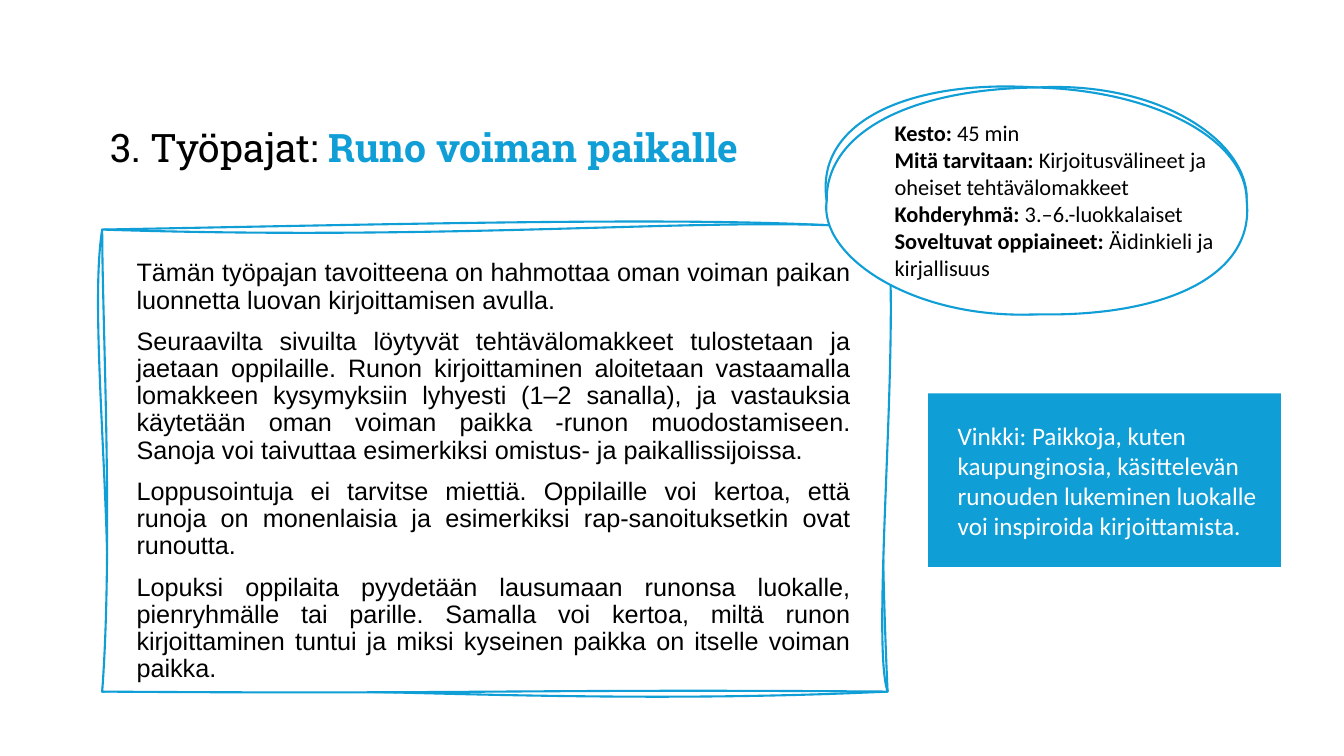
from lxml.etree import SubElement
from pptx import Presentation
from pptx.dml.color import RGBColor
from pptx.enum.shapes import MSO_SHAPE
from pptx.enum.text import MSO_ANCHOR, MSO_AUTO_SIZE, PP_ALIGN
from pptx.oxml.ns import qn
from pptx.util import Pt

BLUE = RGBColor(0x0F, 0x9E, 0xD5)
BLACK = RGBColor(0, 0, 0)
WHITE = RGBColor(0xFF, 0xFF, 0xFF)

WIDE_MARGINS = (7.2, 3.6)
NARROW_MARGINS = (4.5, 2.25)

# Each stroke is a start point followed by cubic curves, in points from the shape's corner.
FRAME_STROKES = [
    [(0, 0),
     (265, -5), (459, -10), (561, 0),
     (558, 69), (554, 176), (561, 330),
     (327, 341), (137, 323), (0, 330),
     (13, 251), (-11, 67), (0, 0)],
    [(0, 0),
     (274, 9), (462, -12), (561, 0),
     (570, 80), (549, 294), (561, 330),
     (300, 328), (276, 332), (0, 330),
     (8, 222), (0, 64), (0, 0)],
]
OVAL_STROKES = [
    [(0, 81),
     (-9, 24), (60, -6), (150, 0),
     (238, -5), (302, 39), (300, 81),
     (289, 130), (240, 148), (150, 162),
     (76, 163), (-1, 132), (0, 81)],
    [(0, 81),
     (-1, 33), (58, 1), (150, 0),
     (232, 2), (300, 36), (300, 81),
     (306, 135), (241, 164), (150, 162),
     (61, 166), (-6, 120), (0, 81)],
]

TITLE = [[("3. Työpajat: ", False), ("Runo voiman paikalle", True)]]
WORKSHOP_TEXT = [
    "Tämän työpajan tavoitteena on hahmottaa oman voiman paikan luonnetta "
    "luovan kirjoittamisen avulla.",
    "Seuraavilta sivuilta löytyvät tehtävälomakkeet tulostetaan ja jaetaan "
    "oppilaille. Runon kirjoittaminen aloitetaan vastaamalla lomakkeen "
    "kysymyksiin lyhyesti (1–2 sanalla), ja vastauksia käytetään oman voiman "
    "paikka -runon muodostamiseen. Sanoja voi taivuttaa esimerkiksi omistus- "
    "ja paikallissijoissa.",
    "Loppusointuja ei tarvitse miettiä. Oppilaille voi kertoa, että runoja on "
    "monenlaisia ja esimerkiksi rap-sanoituksetkin ovat runoutta.",
    "Lopuksi oppilaita pyydetään lausumaan runonsa luokalle, pienryhmälle tai "
    "parille. Samalla voi kertoa, miltä runon kirjoittaminen tuntui ja miksi "
    "kyseinen paikka on itselle voiman paikka.",
]
FACTS = [
    [("Kesto: ", True), ("45 min", False)],
    [("Mitä tarvitaan:", True),
     (" Kirjoitusvälineet ja oheiset tehtävälomakkeet", False)],
    [("Kohderyhmä:", True), (" 3.–6.-luokkalaiset", False)],
    [("Soveltuvat oppiaineet: ", True), ("Äidinkieli ja kirjallisuus", False)],
]
TIP = ["Vinkki: Paikkoja, kuten kaupunginosia, käsittelevän runouden lukeminen "
       "luokalle voi inspiroida kirjoittamista."]


def add_sketched_outline(slide, left, top, width, height, strokes):
    """Draw a white shape whose blue outline is gone over once per stroke."""
    right, bottom = left + width, top + height
    builder = slide.shapes.build_freeform(Pt(left), Pt(top))
    builder.add_line_segments(
        [(Pt(x), Pt(y)) for x, y in ((right, top), (right, bottom), (left, bottom))])
    outline = builder.convert_to_shape()
    outline.shadow.inherit = False
    outline.fill.solid()
    outline.fill.fore_color.rgb = WHITE
    outline.line.color.rgb = BLUE
    outline.line.width = Pt(1.5)

    curves = next(outline.element.iter(qn("a:pathLst")))
    for corner_path in list(curves):
        curves.remove(corner_path)
    for index, stroke in enumerate(strokes):
        curve = SubElement(curves, qn("a:path"), w=str(width), h=str(height))
        if index < len(strokes) - 1:
            curve.set("fill", "none")
        add_points(curve, "a:moveTo", stroke[:1])
        for first in range(1, len(stroke), 3):
            add_points(curve, "a:cubicBezTo", stroke[first:first + 3])
        SubElement(curve, qn("a:close"))


def add_points(curve, command, points):
    step = SubElement(curve, qn(command))
    for x, y in points:
        SubElement(step, qn("a:pt"), x=str(x), y=str(y))


def add_panel(slide, left, top, width, height):
    panel = slide.shapes.add_shape(
        MSO_SHAPE.RECTANGLE, Pt(left), Pt(top), Pt(width), Pt(height))
    panel.shadow.inherit = False
    panel.fill.solid()
    panel.fill.fore_color.rgb = BLUE
    panel.line.fill.background()


def add_text(slide, left, top, width, height, paragraphs, font, size,
             color=BLACK, bold_color=BLACK, margins=WIDE_MARGINS,
             anchor=MSO_ANCHOR.TOP, align=PP_ALIGN.LEFT,
             line_spacing=1.0, space_before=0, grow=False):
    """Add a text box; a paragraph is a string or a list of (words, bold) pairs."""
    frame = slide.shapes.add_textbox(
        Pt(left), Pt(top), Pt(width), Pt(height)).text_frame
    frame.word_wrap = True
    frame.auto_size = MSO_AUTO_SIZE.SHAPE_TO_FIT_TEXT if grow else MSO_AUTO_SIZE.NONE
    frame.vertical_anchor = anchor
    frame.margin_left = frame.margin_right = Pt(margins[0])
    frame.margin_top = frame.margin_bottom = Pt(margins[1])
    for index, content in enumerate(paragraphs):
        paragraph = frame.add_paragraph() if index else frame.paragraphs[0]
        paragraph.alignment = align
        paragraph.line_spacing = line_spacing
        paragraph.space_before = Pt(space_before if index else 0)
        paragraph.font.name = font
        paragraph.font.size = Pt(size)
        parts = [(content, False)] if isinstance(content, str) else content
        for words, bold in parts:
            run = paragraph.add_run()
            run.text = words
            run.font.bold = bold
            run.font.color.rgb = bold_color if bold else color


def main():
    presentation = Presentation()
    presentation.slide_width, presentation.slide_height = Pt(960), Pt(540)
    slide = presentation.slides.add_slide(presentation.slide_layouts[6])

    add_panel(slide, 663, 281, 252, 124)
    add_sketched_outline(slide, 73, 164, 561, 330, FRAME_STROKES)
    add_sketched_outline(slide, 590.5, 62.5, 300, 162, OVAL_STROKES)

    add_text(slide, 72, 49.5, 492.5, 114.5, TITLE, "Roboto Slab", 28,
             bold_color=BLUE, anchor=MSO_ANCHOR.MIDDLE, line_spacing=0.9)
    add_text(slide, 93, 183.5, 519, 258.5, WORKSHOP_TEXT, "Arial", 18,
             margins=NARROW_MARGINS, align=PP_ALIGN.JUSTIFY,
             line_spacing=0.9, space_before=10)
    add_text(slide, 634.5, 83, 242.5, 121, FACTS, "Calibri", 16,
             margins=NARROW_MARGINS, grow=True)
    add_text(slide, 677, 296.5, 237.5, 94.5, TIP, "Calibri", 18,
             color=WHITE, grow=True)

    presentation.save("out.pptx")


if __name__ == "__main__":
    main()
